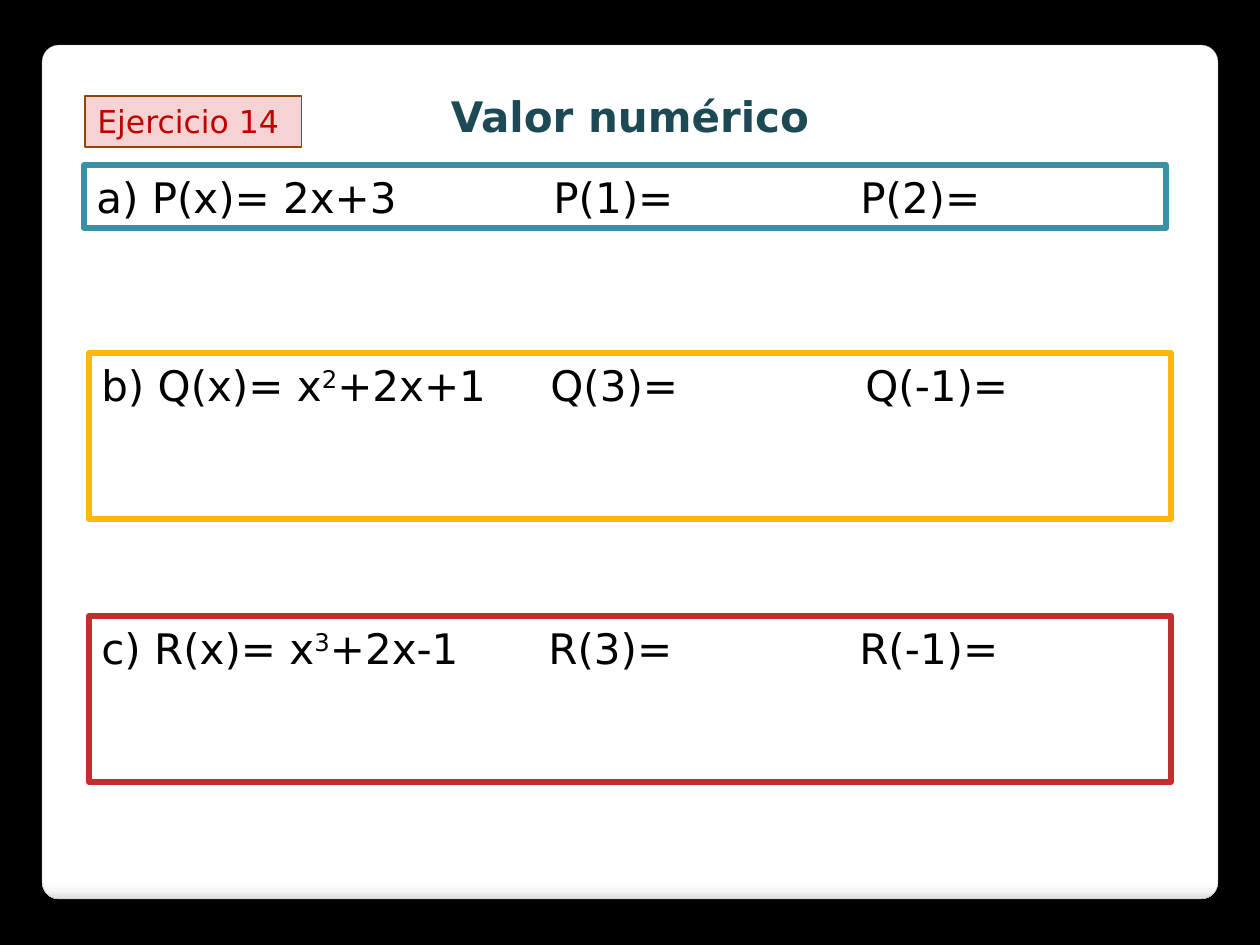
from lxml.etree import SubElement
from pptx import Presentation
from pptx.dml.color import RGBColor
from pptx.enum.shapes import MSO_SHAPE as Shape
from pptx.enum.text import MSO_ANCHOR as Anchor, PP_ALIGN as Align
from pptx.oxml.ns import qn
from pptx.util import Emu, Pt

PX = 914400 / 126
FONT = "DejaVu Sans"

BLACK = RGBColor(0x00, 0x00, 0x00)
WHITE = RGBColor(0xFF, 0xFF, 0xFF)
PANEL_LINE = RGBColor(0xA4, 0xA4, 0xA4)
TITLE_BLUE = RGBColor(0x1C, 0x49, 0x54)
TEAL = RGBColor(0x38, 0x91, 0xA7)
YELLOW = RGBColor(0xFE, 0xB8, 0x0A)
RED = RGBColor(0xC3, 0x2D, 0x2E)
TAG_FILL = RGBColor(0xF5, 0xD3, 0xD3)
TAG_LINE = RGBColor(0x96, 0x43, 0x05)
TAG_TEXT = RGBColor(0xC0, 0x00, 0x00)
PANEL_STOPS = [
    (0, WHITE),
    (98, WHITE),
    (99, RGBColor(0xF7, 0xF7, 0xF7)),
    (100, RGBColor(0xDA, 0xDA, 0xDA)),
]

# box, line colour, (text, is superscript) pieces, tab stops in px
EXERCISES = [
    ((84, 165, 1082, 63), TEAL,
     [("a) P(x)= 2x+3\tP(1)=\tP(2)=", False)], (457, 764)),
    ((89, 353, 1082, 166), YELLOW,
     [("b) Q(x)= x", False), ("2", True), ("+2x+1\tQ(3)=\tQ(-1)=", False)],
     (449, 764)),
    ((89, 616, 1082, 166), RED,
     [("c) R(x)= x", False), ("3", True), ("+2x-1\tR(3)=\tR(-1)=", False)],
     (447, 758)),
]


def px(length):
    return Emu(round(length * PX))


def add_box(slide, box, fill, line, width, kind=Shape.RECTANGLE):
    shape = slide.shapes.add_shape(kind, *map(px, box))
    shape.shadow.inherit = False
    if fill is not None:
        shape.fill.solid()
        shape.fill.fore_color.rgb = fill
    shape.line.color.rgb = line
    shape.line.width = Pt(width)
    frame = shape.text_frame
    frame.word_wrap = True
    frame.vertical_anchor = Anchor.TOP
    frame.paragraphs[0].alignment = Align.LEFT
    return shape


def format_runs(paragraph, size, color, bold=False):
    for run in paragraph.runs:
        run.font.name = FONT
        run.font.size = Pt(size)
        run.font.bold = bold
        run.font.color.rgb = color


def add_panel(slide, box):
    """Rounded sheet with a shaded bottom edge, sent behind everything."""
    panel = add_box(slide, box, None, PANEL_LINE, 0.16, Shape.ROUNDED_RECTANGLE)
    panel.adjustments[0] = 0.02
    panel.fill.gradient()
    panel.fill.gradient_angle = 270
    stops = panel._element.spPr.find(qn("a:gradFill")).find(qn("a:gsLst"))
    for stop in list(stops):
        stops.remove(stop)
    for position, color in PANEL_STOPS:
        stop = SubElement(stops, qn("a:gs"), pos=str(position * 1000))
        SubElement(stop, qn("a:srgbClr"), val=str(color))
    slide.shapes._spTree.insert(2, panel._element)


def set_title(slide, box, text):
    title = slide.shapes.title
    title.left, title.top, title.width, title.height = map(px, box)
    frame = title.text_frame
    frame.text = text
    frame.vertical_anchor = Anchor.TOP
    frame.paragraphs[0].alignment = Align.CENTER
    format_runs(frame.paragraphs[0], 24, TITLE_BLUE, bold=True)


def add_exercise(slide, box, color, pieces, tabs):
    shape = add_box(slide, box, WHITE, color, 3.35)
    paragraph = shape.text_frame.paragraphs[0]
    tab_list = SubElement(paragraph._p.get_or_add_pPr(), qn("a:tabLst"))
    for tab in tabs:
        SubElement(tab_list, qn("a:tab"), pos=str(px(tab)), algn="l")
    for text, superscript in pieces:
        run = paragraph.add_run()
        run.text = text
        if superscript:
            run._r.get_or_add_rPr().set("baseline", "30000")
    format_runs(paragraph, 24, BLACK)


def add_tag(slide, box, text):
    shape = add_box(slide, box, TAG_FILL, TAG_LINE, 0.75)
    paragraph = shape.text_frame.paragraphs[0]
    paragraph.text = text
    format_runs(paragraph, 18, TAG_TEXT)


def main():
    presentation = Presentation()
    presentation.slide_width = px(1260)
    presentation.slide_height = px(945)
    slide = presentation.slides.add_slide(presentation.slide_layouts[5])
    slide.background.fill.solid()
    slide.background.fill.fore_color.rgb = BLACK

    add_panel(slide, (42, 45, 1176, 854))
    set_title(slide, (49, 84, 1162, 63), "Valor numérico")
    for exercise in EXERCISES:
        add_exercise(slide, *exercise)
    add_tag(slide, (85, 96, 217, 51), "Ejercicio 14")
    presentation.save("out.pptx")


if __name__ == "__main__":
    main()
